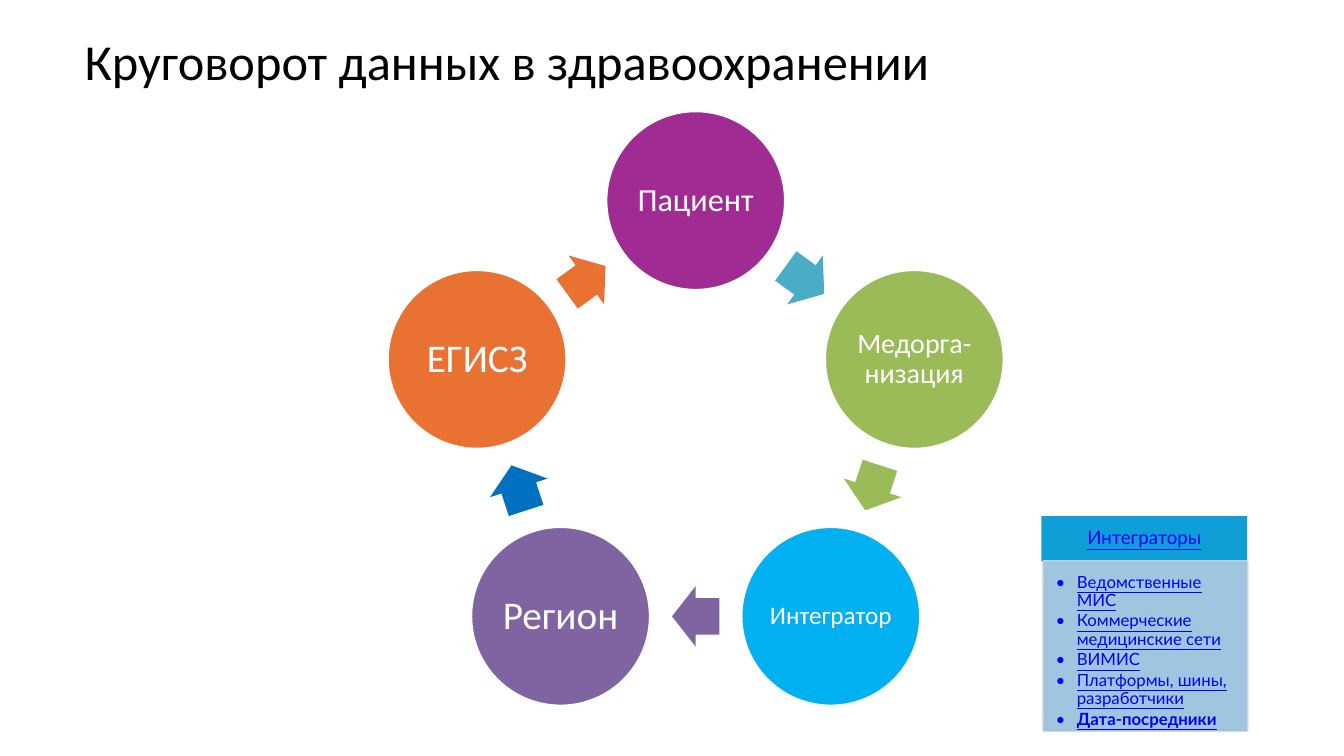
import math
import pptx
import pptx.util
import pptx.dml.color
import pptx.enum.shapes
import pptx.enum.text
import pptx.oxml.ns
from lxml import etree

Inches = pptx.util.Inches
Pt = pptx.util.Pt
SHAPE = pptx.enum.shapes.MSO_SHAPE
ALIGN = pptx.enum.text.PP_ALIGN
ANCHOR = pptx.enum.text.MSO_ANCHOR
qn = pptx.oxml.ns.qn

COLORS = {
    "black": "000000", "white": "FFFFFF", "link": "0000FF",
    "plum": "A02B93", "teal": "4BACC6", "green": "9BBB59",
    "sky": "00B0F0", "violet": "8064A2", "navy": "0070C0",
    "orange": "E97132", "head": "0F9ED5", "pale": "D8D3E0",
}
STEPS = [
    ("Пациент", 23, "plum", "teal"),
    ("Медорга- низация", 20, "green", "green"),
    ("Интегратор", 18, "sky", "violet"),
    ("Регион", 28, "violet", "navy"),
    ("ЕГИСЗ", 28, "orange", "orange"),
]
ITEMS = ["Ведомственные МИС", "Коммерческие медицинские сети", "ВИМИС",
         "Платформы, шины, разработчики", "Дата-посредники"]
MID_X, MID_Y, RADIUS = 6.9, 4.27, 2.28
SIZE = 1.78


def color(name):
    return pptx.dml.color.RGBColor.from_string(COLORS[name])


def fade(fill, share):
    tint = fill._xPr.find(qn("a:solidFill"))[0]
    etree.SubElement(tint, qn("a:alpha"), val=str(share * 1000))


def add_box(slide, kind, box, fill, line=None):
    shape = slide.shapes.add_shape(kind, *map(Inches, box))
    shape.shadow.inherit = False
    shape.fill.solid()
    shape.fill.fore_color.rgb = color(fill)
    if line:
        shape.line.color.rgb = color(line)
        shape.line.width = Pt(2)
    else:
        shape.line.fill.background()
    return shape


def set_frame(shape, pads, anchor=ANCHOR.MIDDLE):
    frame = shape.text_frame
    frame.word_wrap = True
    frame.vertical_anchor = anchor
    (frame.margin_left, frame.margin_top,
     frame.margin_right, frame.margin_bottom) = map(Inches, pads)
    return frame


def add_run(para, text, size, font, tint, link=False, bold=False):
    run = para.add_run()
    run.text = text
    run.font.size = Pt(size)
    run.font.name = font
    run.font.color.rgb = color(tint)
    run.font.underline = link
    run.font.bold = bold


def add_title(slide):
    box = slide.shapes.add_textbox(
        Inches(0.84), Inches(0.3), Inches(12.14), Inches(0.61))
    frame = set_frame(box, (0, 0, 0, 0), ANCHOR.TOP)
    para = frame.paragraphs[0]
    para.space_after = Pt(4)
    add_run(para, "Круговорот данных в здравоохранении", 36, "Calibri", "black")


def ring_point(angle, radius):
    turn = math.radians(angle)
    return MID_X + radius * math.sin(turn), MID_Y - radius * math.cos(turn)


def add_step(slide, angle, text, size, fill):
    x, y = ring_point(angle, RADIUS)
    box = (x - SIZE / 2, y - SIZE / 2, SIZE, SIZE)
    disc = add_box(slide, SHAPE.OVAL, box, fill, "white")
    para = set_frame(disc, (0, 0, 0, 0)).paragraphs[0]
    para.alignment = ALIGN.CENTER
    para.line_spacing = 0.9
    add_run(para, text, size, "Calibri", "white")


def add_arrow(slide, angle, fill):
    x, y = ring_point(angle, RADIUS * math.cos(math.radians(36)))
    wide, high = 0.47, 0.6
    box = (x - wide / 2, y - high / 2, wide, high)
    arrow = add_box(slide, SHAPE.RIGHT_ARROW, box, fill)
    arrow.adjustments[0] = 0.6
    arrow.adjustments[1] = 0.5
    arrow.rotation = angle


def add_bullet(para):
    props = para._p.get_or_add_pPr()
    props.set("marL", str(Inches(0.21)))
    props.set("indent", str(-Inches(0.21)))
    etree.SubElement(props, qn("a:buFont"), typeface="Lato")
    etree.SubElement(props, qn("a:buChar"), char="•")


def add_panel(slide):
    head = add_box(slide, SHAPE.RECTANGLE, (10.33, 5.12, 2.04, 0.45), "head")
    para = set_frame(head, (0.16, 0.09, 0.16, 0.09)).paragraphs[0]
    para.alignment = ALIGN.CENTER
    para.line_spacing = 0.9
    add_run(para, "Интеграторы", 13.3, "Lato", "link", link=True)

    area = (10.35, 5.57, 2.02, 1.68)
    base = add_box(slide, SHAPE.RECTANGLE, area, "pale", "pale")
    fade(base.fill, 90)
    fade(base.line.fill, 90)
    body = add_box(slide, SHAPE.RECTANGLE, area, "head")
    fade(body.fill, 29)
    frame = set_frame(body, (0.12, 0.12, 0.16, 0.17), ANCHOR.TOP)
    for i, item in enumerate(ITEMS):
        para = frame.add_paragraph() if i else frame.paragraphs[0]
        para.alignment = ALIGN.LEFT
        para.line_spacing = 0.9
        para.space_after = Pt(1.8)
        add_bullet(para)
        add_run(para, item, 12, "Lato", "link", link=True,
                bold=item == ITEMS[-1])


def main():
    deck = pptx.Presentation()
    deck.slide_width = Inches(13.33)
    deck.slide_height = Inches(7.5)
    slide = deck.slides.add_slide(deck.slide_layouts[6])
    add_title(slide)
    gap = 360 / len(STEPS)
    for i, (text, size, fill, tint) in enumerate(STEPS):
        add_step(slide, i * gap, text, size, fill)
        add_arrow(slide, (i + 0.5) * gap, tint)
    add_panel(slide)
    deck.save("out.pptx")


if __name__ == "__main__":
    main()
